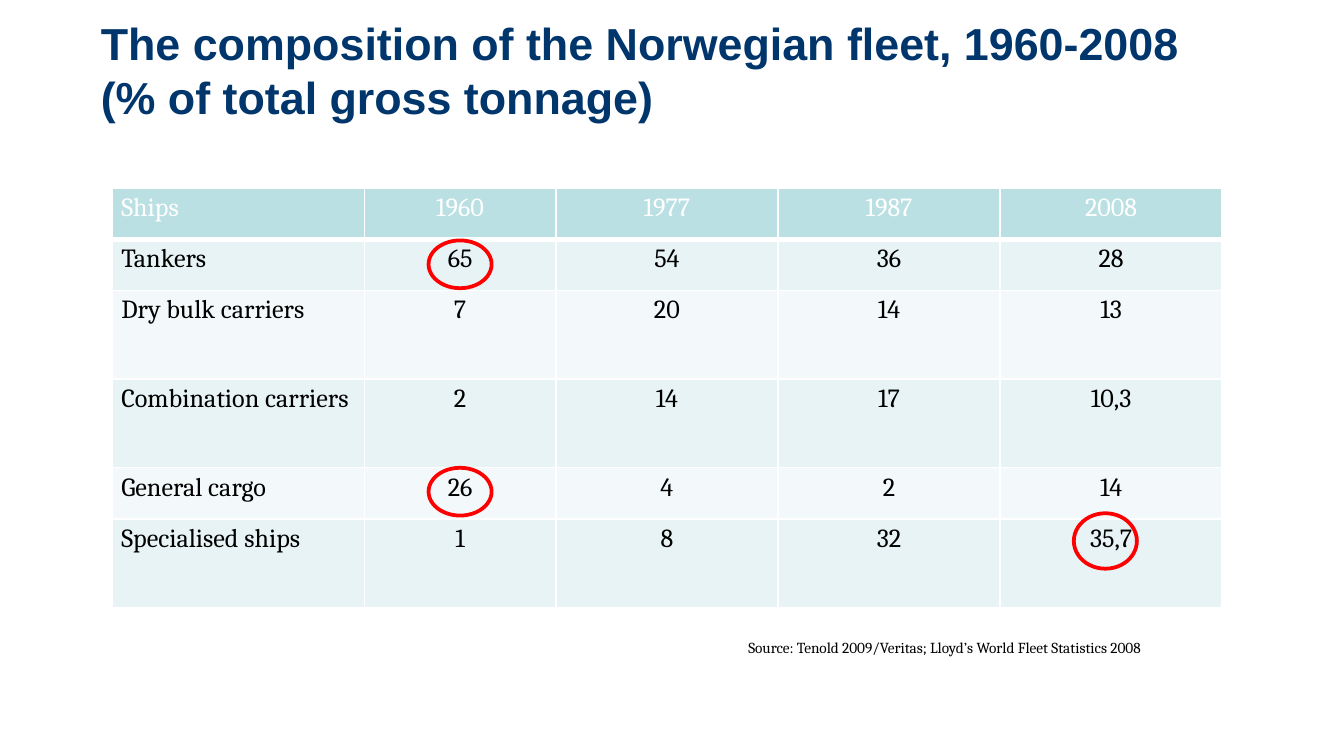
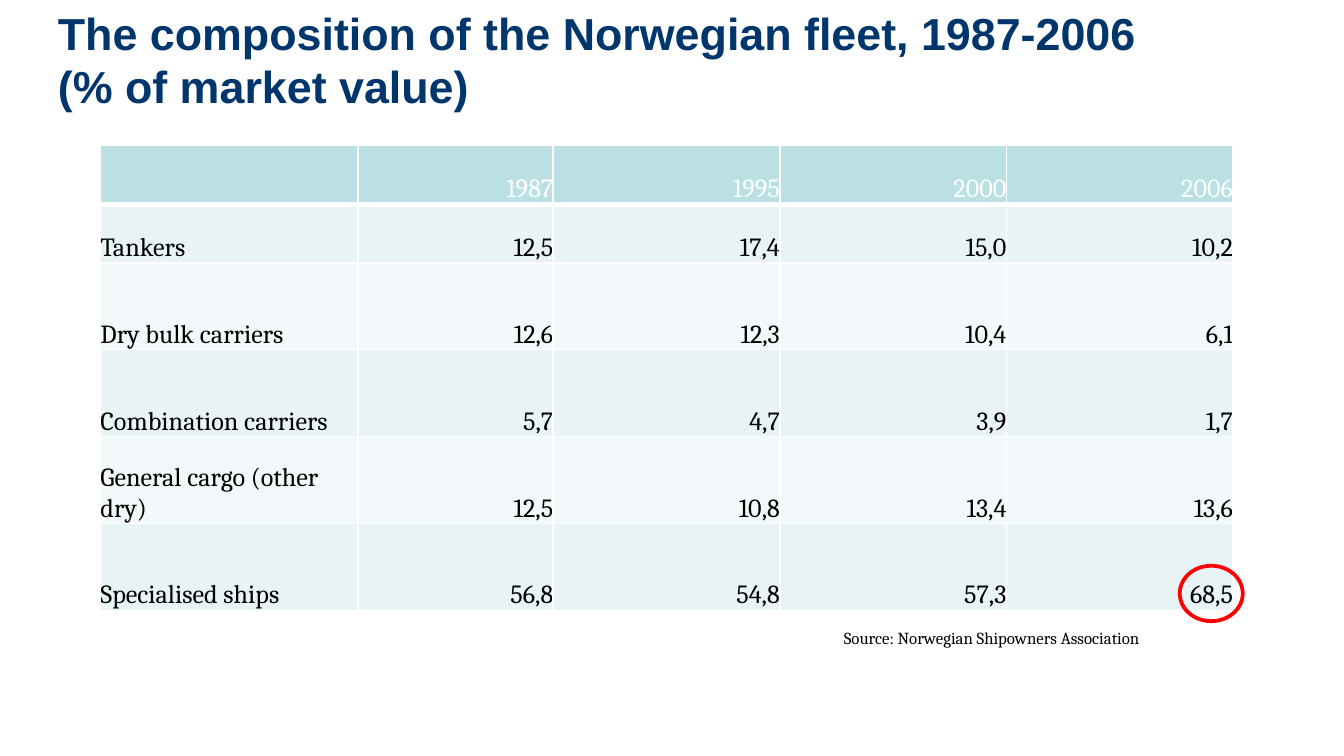
from lxml.etree import SubElement
from pptx import Presentation
from pptx.dml.color import RGBColor
from pptx.enum.shapes import MSO_SHAPE
from pptx.enum.text import MSO_ANCHOR, MSO_AUTO_SIZE, PP_ALIGN
from pptx.oxml.ns import qn
from pptx.util import Pt

# Shared look
COLOURS = {
    "title": "00366C",
    "header": "BBE0E3",
    "odd_row": "E7F3F4",
    "even_row": "F3F9FA",
    "white": "FFFFFF",
    "black": "000000",
    "ring": "FF0000",
}
TITLE_FONT = "Arial"
BODY_FONT = "Cambria"
RING_WIDTH = 33.8


def colour(name):
    return RGBColor.from_string(COLOURS[name])


def format_text(frame, font, size, colour_name, align=PP_ALIGN.LEFT, bold=False):
    for para in frame.paragraphs:
        para.alignment = align
        for span in para.runs:
            span.font.name = font
            span.font.size = Pt(size)
            span.font.bold = bold
            span.font.color.rgb = colour(colour_name)


def set_margins(target, horizontal, vertical):
    target.margin_left = target.margin_right = Pt(horizontal)
    target.margin_top = target.margin_bottom = Pt(vertical)


def add_title(page, text, left, top, width, height):
    title = page.shapes.title
    title.left, title.top, title.width, title.height = map(Pt, (left, top, width, height))
    frame = title.text_frame
    frame.text = text
    frame.word_wrap = True
    frame.auto_size = MSO_AUTO_SIZE.NONE
    frame.vertical_anchor = MSO_ANCHOR.BOTTOM
    set_margins(frame, 0, 0)
    format_text(frame, TITLE_FONT, 24, "title", bold=True)


def add_borders(cell, bottom_width):
    properties = cell._tc.get_or_add_tcPr()
    for side, width in (("L", 1), ("R", 1), ("T", 1), ("B", bottom_width)):
        line = SubElement(properties, qn(f"a:ln{side}"), w=str(Pt(width)))
        fill = SubElement(line, qn("a:solidFill"))
        SubElement(fill, qn("a:srgbClr"), val=COLOURS["white"])


def add_fleet_table(page, rows, left, top, widths, heights, align, anchor, margins):
    frame = page.shapes.add_table(len(rows), len(widths), Pt(left), Pt(top),
                                  Pt(sum(widths)), Pt(sum(heights)))
    table = frame.table
    table.first_row = table.horz_banding = False
    for column, width in zip(table.columns, widths):
        column.width = Pt(width)
    for i, (values, height) in enumerate(zip(rows, heights)):
        table.rows[i].height = Pt(height)
        is_header = i == 0
        fill = "header" if is_header else ("odd_row" if i % 2 else "even_row")
        for j, value in enumerate(values):
            cell = table.cell(i, j)
            cell.text = value
            cell.vertical_anchor = anchor
            set_margins(cell, *margins)
            add_borders(cell, 3 if is_header else 1)
            cell.fill.solid()
            cell.fill.fore_color.rgb = colour(fill)
            format_text(cell.text_frame, BODY_FONT, 14,
                        "white" if is_header else "black",
                        align if j else PP_ALIGN.LEFT)


def add_source(page, text, left, top, width, height, size):
    box = page.shapes.add_textbox(Pt(left), Pt(top), Pt(width), Pt(height))
    frame = box.text_frame
    frame.text = text
    frame.word_wrap = False
    frame.auto_size = MSO_AUTO_SIZE.SHAPE_TO_FIT_TEXT
    format_text(frame, BODY_FONT, size, "black")


def add_ring(page, left, top, height):
    ring = page.shapes.add_shape(MSO_SHAPE.OVAL, Pt(left), Pt(top),
                                 Pt(RING_WIDTH), Pt(height))
    ring.shadow.inherit = False
    ring.fill.background()
    ring.line.color.rgb = colour("ring")
    ring.line.width = Pt(2)


def build_tonnage_page(page):
    add_title(page, "The composition of the Norwegian fleet, 1960-2008\v(% of total gross tonnage)",
              54, 18, 646.6, 48.2)
    rows = [
        ("Ships", "1960", "1977", "1987", "2008"),
        ("Tankers", "65", "54", "36", "28"),
        ("Dry bulk carriers", "7", "20", "14", "13"),
        ("Combination carriers", "2", "14", "17", "10,3"),
        ("General cargo", "26", "4", "2", "14"),
        ("Specialised ships", "1", "8", "32", "35,7"),
    ]
    add_fleet_table(page, rows, 60, 100.8, [135.2, 102.6] + [119] * 3,
                    [27.4, 27.4, 47.5, 47.5, 27.4, 47.5],
                    PP_ALIGN.CENTER, MSO_ANCHOR.TOP, (5, 2.7))
    add_source(page, "Source: Tenold 2009/Veritas; Lloyd’s World Fleet Statistics 2008",
               393.8, 338.4, 234, 17.3, 8.2)
    # Rings mark the leading types of ship
    for left, top, height in ((229.6, 128.8, 25.6), (229.6, 250.6, 25.6), (575.3, 275, 29.7)):
        add_ring(page, left, top, height)


def build_value_page(page):
    add_title(page, "The composition of the Norwegian fleet, 1987-2006\v(% of market value)",
              31, 18, 668.9, 42.5)
    rows = [
        ("", "1987", "1995", "2000", "2006"),
        ("Tankers", "12,5", "17,4", "15,0", "10,2"),
        ("Dry bulk carriers", "12,6", "12,3", "10,4", "6,1"),
        ("Combination carriers", "5,7", "4,7", "3,9", "1,7"),
        ("General cargo (other dry)", "12,5", "10,8", "13,4", "13,6"),
        ("Specialised ships", "56,8", "54,8", "57,3", "68,5"),
    ]
    add_fleet_table(page, rows, 53.8, 78, [138, 104.6] + [121.4] * 3,
                    [31.4] * 2 + [46.6] * 4,
                    PP_ALIGN.RIGHT, MSO_ANCHOR.BOTTOM, (0, 0))
    add_source(page, "Source: Norwegian Shipowners Association",
               445, 332.6, 175.7, 18, 9)
    add_ring(page, 632, 303.1, 29.7)


def main():
    deck = Presentation()
    deck.slide_width, deck.slide_height = Pt(720), Pt(405)
    title_only = deck.slide_layouts[5]
    for build in (build_tonnage_page, build_value_page):
        build(deck.slides.add_slide(title_only))
    deck.save("out.pptx")


if __name__ == "__main__":
    main()
